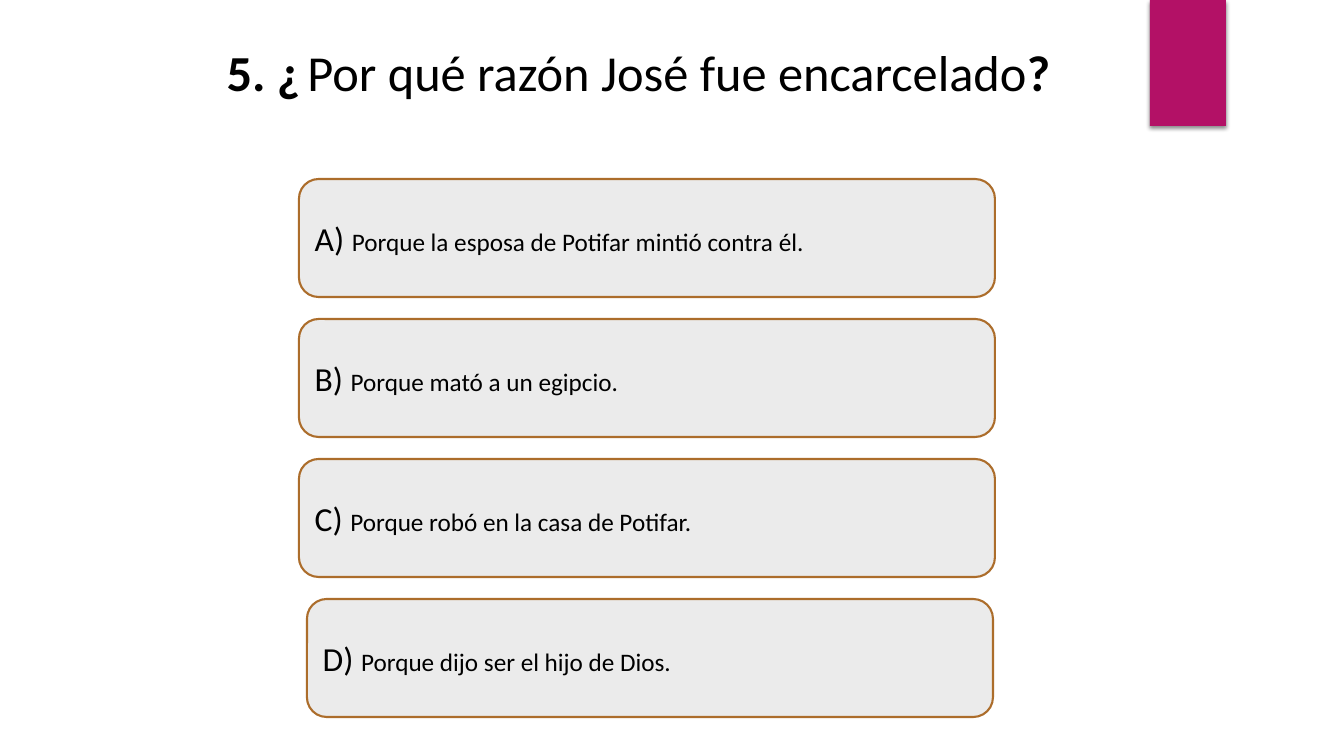
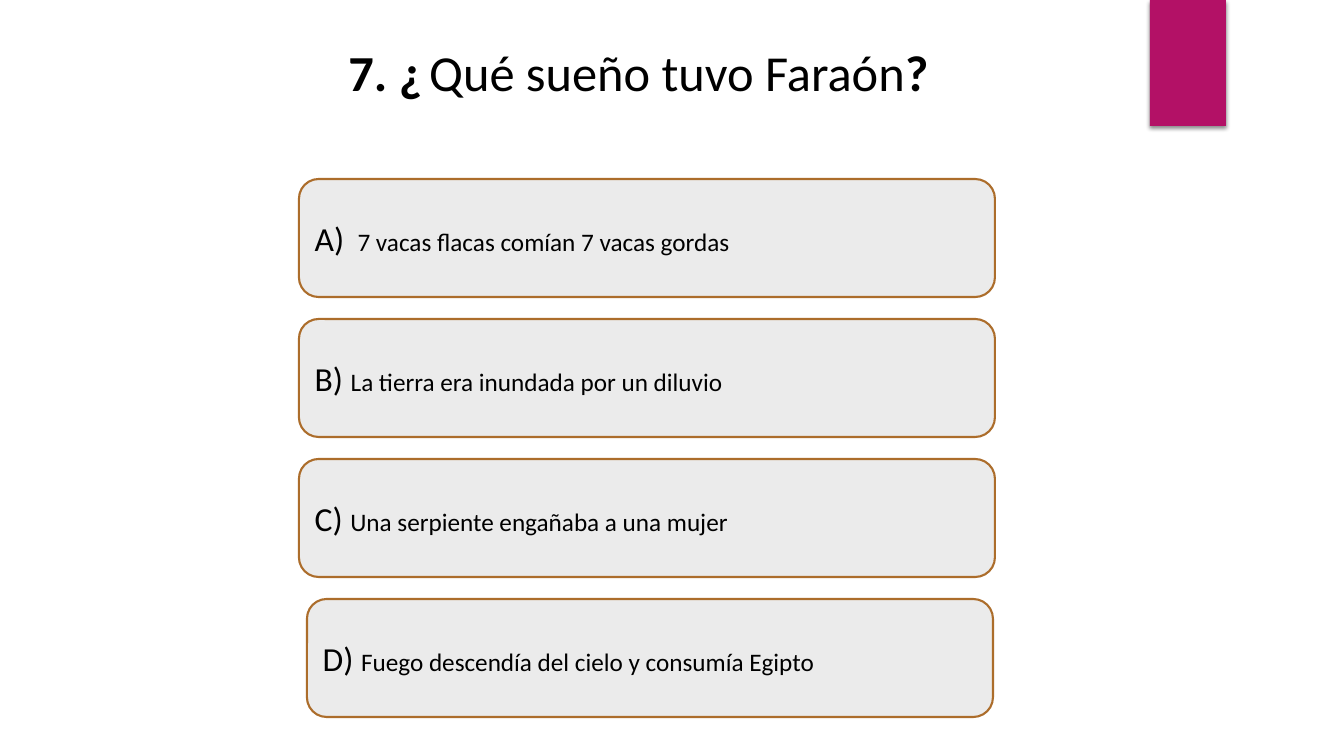
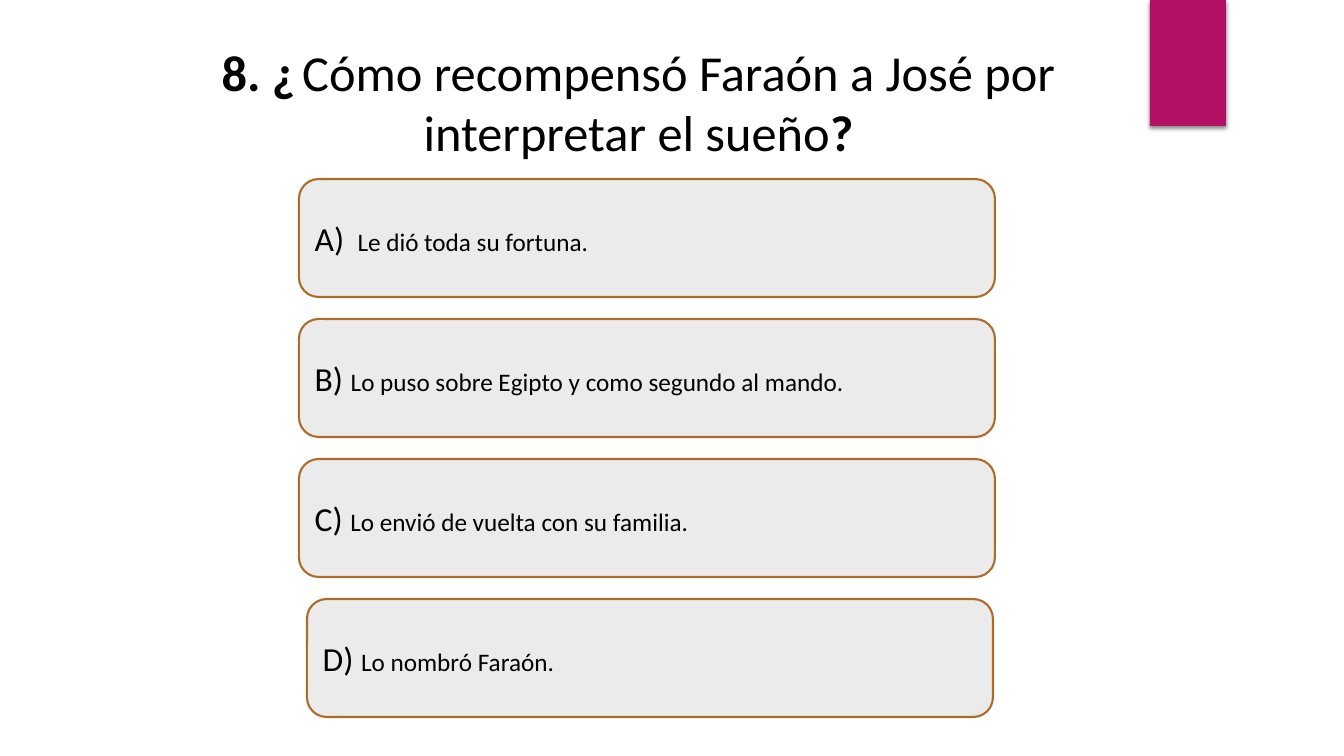
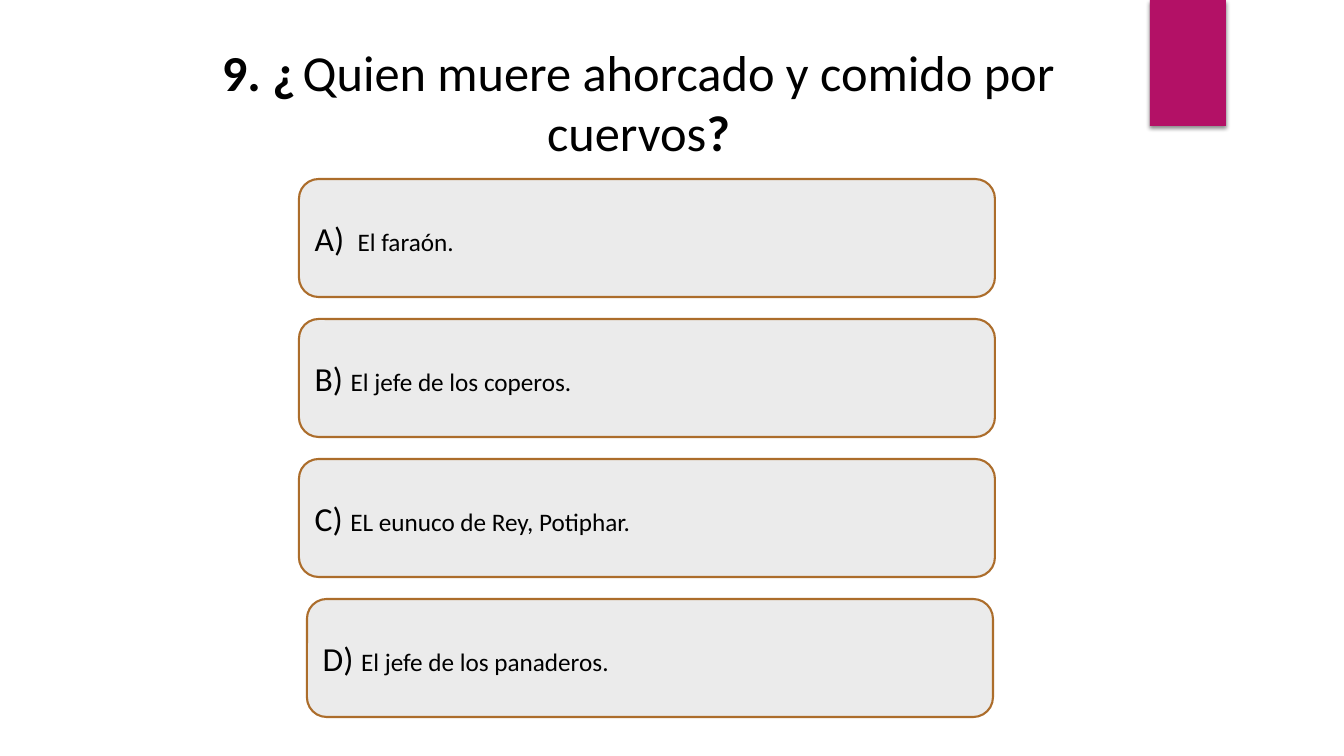
import pptx
import pptx.dml.color
import pptx.enum.shapes
import pptx.enum.text
import pptx.oxml
import pptx.oxml.ns
import pptx.util

ANCHOR = pptx.enum.text.MSO_ANCHOR
ALIGN = pptx.enum.text.PP_ALIGN
SHAPE = pptx.enum.shapes.MSO_SHAPE

QUESTIONS = [
    ("5", "Por qué razón José fue encarcelado", 132, [
        "Porque la esposa de Potifar mintió contra él.",
        "Porque mató a un egipcio.",
        "Porque robó en la casa de Potifar.",
        "Porque dijo ser el hijo de Dios.",
    ]),
    ("7", "Qué sueño tuvo Faraón", 72, [
        " 7 vacas flacas comían 7 vacas gordas",
        "La tierra era inundada por un diluvio",
        "Una serpiente engañaba a una mujer",
        "Fuego descendía del cielo y consumía Egipto",
    ]),
    ("8", "Cómo recompensó Faraón a José por interpretar el sueño", 132, [
        " Le dió toda su fortuna.",
        "Lo puso sobre Egipto y como segundo al mando.",
        "Lo envió de vuelta con su familia.",
        "Lo nombró Faraón.",
    ]),
    ("9", "Quien muere ahorcado y comido por cuervos", 132, [
        " El faraón.",
        "El jefe de los coperos.",
        "EL eunuco de Rey, Potiphar.",
        "El jefe de los panaderos.",
    ]),
]


def px(length):
    return pptx.util.Emu(round(length * 914400 / 100.8))


def rgb(value):
    return pptx.dml.color.RGBColor.from_string(value)


def apply(target, values):
    for name, value in values.items():
        setattr(target, name, value)


class Quiz:
    ACCENT = "B31166"
    PANEL = "EBEBEB"
    BORDER = "AC6D2B"
    INK = "000000"
    FONT = "Calibri"
    SPACER_FONT = "TeX Gyre Adventor"
    ANSWER_TOP = 179
    ANSWER_PITCH = 140
    ANSWER_HEIGHT = 118

    def __init__(self):
        self.deck = pptx.Presentation()
        apply(self.deck, {"slide_width": px(1344), "slide_height": px(756)})
        self.slide = None

    def new_slide(self):
        self.slide = self.deck.slides.add_slide(self.deck.slide_layouts[6])
        self.band()

    def panel(self, kind, box, fill):
        panel = self.slide.shapes.add_shape(kind, *map(px, box))
        panel.shadow.inherit = False
        panel.fill.solid()
        panel.fill.fore_color.rgb = rgb(fill)
        return panel

    def band(self):
        band = self.panel(SHAPE.RECTANGLE, (1150, 0, 76, 126), self.ACCENT)
        band.line.fill.background()
        effects = band._element.spPr.find(pptx.oxml.ns.qn("a:effectLst"))
        effects.append(pptx.oxml.parse_xml(
            f'<a:outerShdw {pptx.oxml.ns.nsdecls("a")} blurRad="{pptx.util.Pt(3)}"'
            f' dist="{pptx.util.Pt(2)}" dir="5400000" rotWithShape="0">'
            f'<a:srgbClr val="{self.INK}"><a:alpha val="45000"/></a:srgbClr>'
            '</a:outerShdw>'))

    def add_text(self, paragraph, text, size, bold=False, font=FONT):
        run = paragraph.add_run()
        run.text = text
        apply(run.font, {"name": font, "size": pptx.util.Pt(size), "bold": bold})
        run.font.color.rgb = rgb(self.INK)

    def title(self, number, question, height):
        title = self.slide.shapes.add_textbox(*map(px, (161, 36, 955, height)))
        apply(title.text_frame, {
            "word_wrap": True,
            "auto_size": pptx.enum.text.MSO_AUTO_SIZE.SHAPE_TO_FIT_TEXT,
        })
        heading = title.text_frame.paragraphs[0]
        heading.alignment = ALIGN.CENTER
        self.add_text(heading, f"{number}. ¿", 36, bold=True)
        self.add_text(heading, " ", 18, font=self.SPACER_FONT)
        self.add_text(heading, question, 36)
        self.add_text(heading, "?", 36, bold=True)

    def answer(self, row, letter, text):
        left, width = (307, 686) if letter == "D" else (299, 696)
        top = self.ANSWER_TOP + row * self.ANSWER_PITCH
        answer = self.panel(SHAPE.ROUNDED_RECTANGLE,
                            (left, top, width, self.ANSWER_HEIGHT), self.PANEL)
        answer.line.color.rgb = rgb(self.BORDER)
        answer.line.width = pptx.util.Pt(1.5)
        apply(answer.text_frame, {"word_wrap": True, "vertical_anchor": ANCHOR.MIDDLE})
        option = answer.text_frame.paragraphs[0]
        option.alignment = ALIGN.LEFT
        self.add_text(option, f"{letter}) ", 24)
        self.add_text(option, text, 18)


def main():
    quiz = Quiz()
    for number, question, title_height, answers in QUESTIONS:
        quiz.new_slide()
        quiz.title(number, question, title_height)
        for row, (letter, text) in enumerate(zip("ABCD", answers)):
            quiz.answer(row, letter, text)
    quiz.deck.save("out.pptx")


if __name__ == "__main__":
    main()
